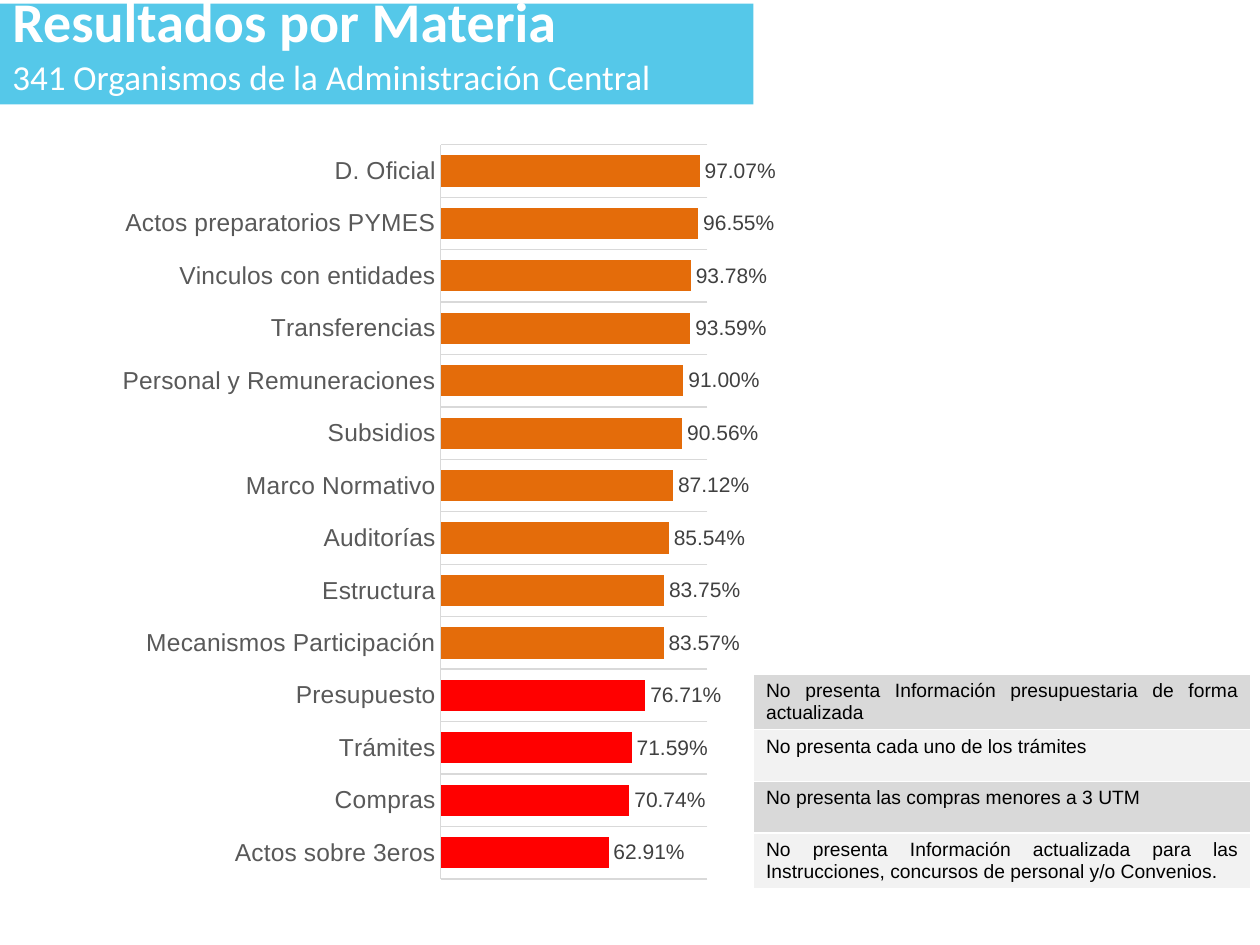
from lxml import etree
from pptx import Presentation
from pptx.chart.data import CategoryChartData
from pptx.dml.color import RGBColor
from pptx.enum import chart as charts, shapes, text
from pptx.oxml import parse_xml
from pptx.oxml.ns import nsdecls, qn
from pptx.util import Inches, Pt

TITLE_LINES = [
    ("Resultados por Materia", 32, True),
    ("341 Organismos de la Administración Central", 20, False),
]
RESULTS = [
    ("Actos sobre 3eros", 0.6291),
    ("Compras", 0.7074),
    ("Trámites", 0.7159),
    ("Presupuesto", 0.7671),
    ("Mecanismos Participación", 0.8357),
    ("Estructura", 0.8375),
    ("Auditorías", 0.8554),
    ("Marco Normativo", 0.8712),
    ("Subsidios", 0.9056),
    ("Personal y Remuneraciones", 0.91),
    ("Transferencias", 0.9359),
    ("Vinculos con entidades", 0.9378),
    ("Actos preparatorios PYMES", 0.9655),
    ("D. Oficial", 0.9707),
]
FINDINGS = [
    "No presenta Información presupuestaria de forma actualizada",
    "No presenta cada uno de los trámites",
    "No presenta las compras menores a 3 UTM",
    "No presenta Información actualizada para las Instrucciones, "
    "concursos de personal y/o Convenios.",
]
LOW_RESULT = 0.8
ROW_FILLS = ["D9D9D9", "F2F2F2"]
PLOT_AREA = {"x": 0.433, "y": 0.051, "w": 0.262, "h": 0.931}


def color(hex_string):
    return RGBColor.from_string(hex_string)


def paint(fill, hex_string):
    fill.solid()
    fill.fore_color.rgb = color(hex_string)


def style_font(font, name, size, hex_string, bold=False):
    font.name = name
    font.size = Pt(size)
    font.bold = bold
    font.color.rgb = color(hex_string)


def style_line(line):
    line.color.rgb = color("D9D9D9")
    line.width = Pt(0.75)


def add_title(slide):
    banner = slide.shapes.add_shape(
        shapes.MSO_SHAPE.RECTANGLE, 0, Inches(0.03), Inches(5.98), Inches(0.8))
    banner.shadow.inherit = False
    paint(banner.fill, "55C8E9")
    banner.line.fill.background()
    frame = banner.text_frame
    frame.word_wrap = True
    frame.vertical_anchor = text.MSO_ANCHOR.MIDDLE
    for index, (line, size, bold) in enumerate(TITLE_LINES):
        paragraph = frame.add_paragraph() if index else frame.paragraphs[0]
        paragraph.alignment = text.PP_ALIGN.LEFT
        paragraph.line_spacing = Pt(25)
        run = paragraph.add_run()
        run.text = line
        style_font(run.font, "Calibri", size, "FFFFFF", bold)


def add_findings(slide):
    row_height = Inches(0.41)
    table = slide.shapes.add_table(
        len(FINDINGS), 1, Inches(5.98), Inches(5.35),
        Inches(3.95), row_height * len(FINDINGS)).table
    table.first_row = False
    table.horz_banding = False
    for index, finding in enumerate(FINDINGS):
        table.rows[index].height = row_height
        cell = table.cell(index, 0)
        paint(cell.fill, ROW_FILLS[index % 2])
        paragraph = cell.text_frame.paragraphs[0]
        paragraph.alignment = text.PP_ALIGN.JUSTIFY
        run = paragraph.add_run()
        run.text = finding
        style_font(run.font, "Arial", 11, "000000")


def place_plot(chart):
    """Fix the inner plot area as fractions of the chart."""
    plot_area = chart._chartSpace.find(".//" + qn("c:plotArea"))
    for layout in plot_area.findall(qn("c:layout")):
        plot_area.remove(layout)
    layout = parse_xml(f"<c:layout {nsdecls('c')}><c:manualLayout/></c:layout>")
    settings = {"layoutTarget": "inner", "xMode": "edge", "yMode": "edge", **PLOT_AREA}
    for name, value in settings.items():
        etree.SubElement(layout[0], qn(f"c:{name}")).set("val", str(value))
    plot_area.insert(0, layout)


def add_results(slide):
    data = CategoryChartData(number_format="0.00%")
    data.categories = [name for name, _ in RESULTS]
    data.add_series("Series 1", [value for _, value in RESULTS])
    chart = slide.shapes.add_chart(
        charts.XL_CHART_TYPE.BAR_CLUSTERED, 0, Inches(0.83),
        Inches(8.08), Inches(6.26), data).chart
    chart.has_legend = False
    chart.has_title = False
    style_font(chart.font, "Calibri", 10, "000000")
    place_plot(chart)

    category_axis = chart.category_axis
    category_axis.major_tick_mark = charts.XL_TICK_MARK.NONE
    category_axis.has_major_gridlines = True
    style_line(category_axis.format.line)
    style_line(category_axis.major_gridlines.format.line)
    style_font(category_axis.tick_labels.font, "Arial", 14, "595959")

    value_axis = chart.value_axis
    value_axis.visible = False
    value_axis.has_major_gridlines = False
    value_axis.minimum_scale = 0
    value_axis.maximum_scale = 1

    plot = chart.plots[0]
    plot.vary_by_categories = False
    plot.gap_width = 68
    plot.overlap = 30
    series = plot.series[0]
    series.invert_if_negative = False
    paint(series.format.fill, "E46C0A")
    for index, (_, value) in enumerate(RESULTS):
        if value < LOW_RESULT:
            paint(series.points[index].format.fill, "FF0000")

    labels = series.data_labels
    labels.show_value = True
    labels.number_format = "0.00%"
    labels.number_format_is_linked = False
    labels.position = charts.XL_LABEL_POSITION.OUTSIDE_END
    style_font(labels.font, "Arial", 12, "404040")


def main():
    presentation = Presentation()
    presentation.slide_width = Inches(10)
    presentation.slide_height = Inches(7.5)
    slide = presentation.slides.add_slide(presentation.slide_layouts[6])
    add_title(slide)
    add_findings(slide)
    add_results(slide)
    presentation.save("out.pptx")


if __name__ == "__main__":
    main()
